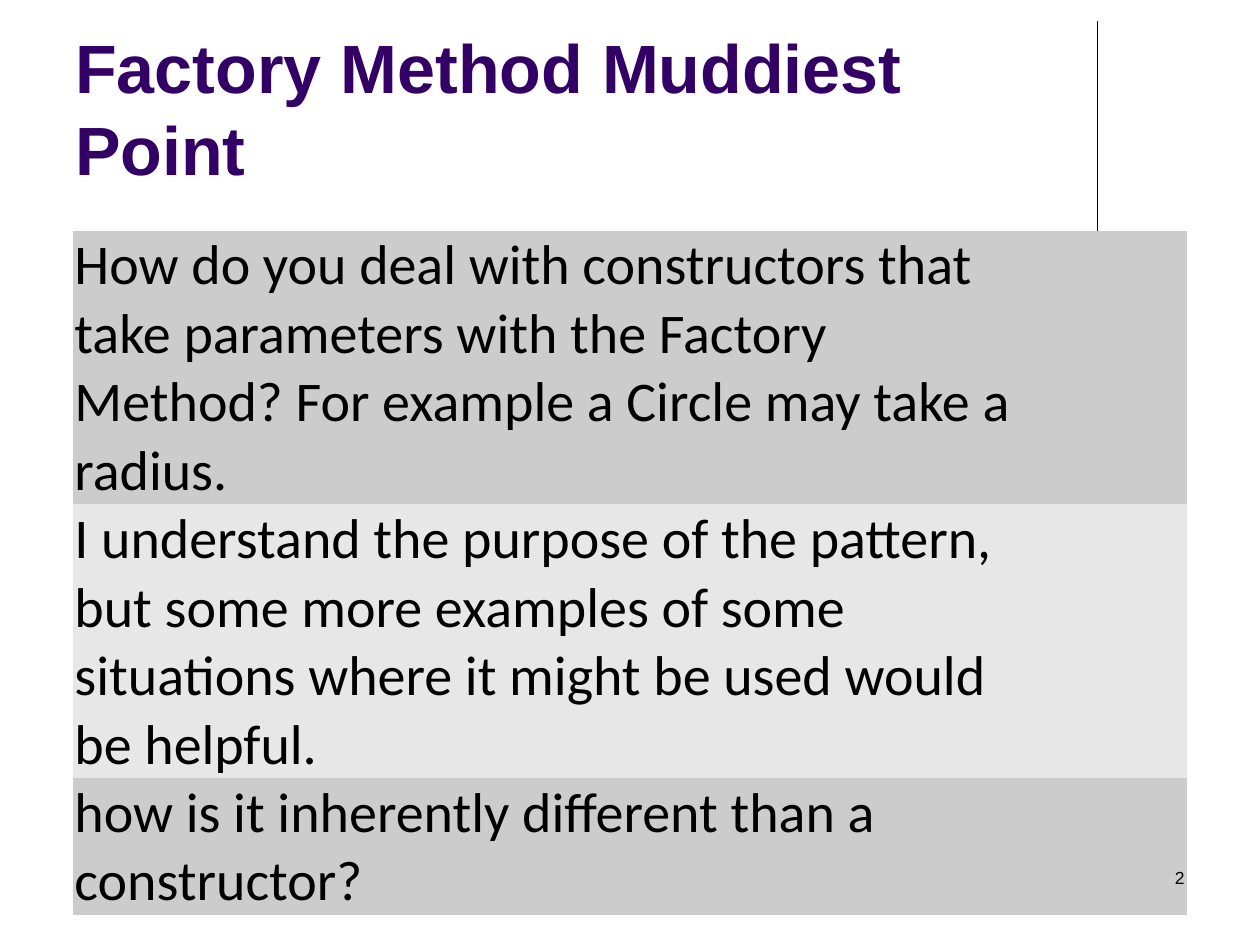
import pptx
import pptx.dml.color
import pptx.enum.shapes
import pptx.enum.text
import pptx.oxml
import pptx.util

Cm = pptx.util.Cm
NO_GRID_STYLE = "{2D5ABB26-0587-4C30-8999-92F81FD0307C}"


def color(hex_string):
    return pptx.dml.color.RGBColor.from_string(hex_string)


def write_text(text_frame, text, text_color, anchor, alignment, font_format):
    text_frame.word_wrap = True
    text_frame.vertical_anchor = anchor
    paragraph = text_frame.paragraphs[0]
    paragraph.alignment = alignment
    run = paragraph.add_run()
    run.text = text
    for name, value in font_format.items():
        setattr(run.font, name, value)
    run.font.color.rgb = color(text_color)


title_format = {"name": "Arial", "size": pptx.util.Pt(39), "bold": True}
cell_format = {"name": "Calibri", "size": pptx.util.Pt(32), "bold": False}
number_format = {"name": "Arial", "size": pptx.util.Pt(10)}
cell_margins = {"margin_left": Cm(0.02), "margin_right": Cm(0.02),
                "margin_top": Cm(0.02), "margin_bottom": 0}
anchors = pptx.enum.text.MSO_ANCHOR
alignments = pptx.enum.text.PP_ALIGN

presentation = pptx.Presentation()
presentation.slide_width = Cm(25.4)
presentation.slide_height = Cm(19.05)
slide = presentation.slides.add_slide(presentation.slide_layouts[6])

# Vertical rule beside the title
rule = slide.shapes.add_connector(
    pptx.enum.shapes.MSO_CONNECTOR.STRAIGHT, Cm(22.12), Cm(0.43), Cm(22.12), Cm(4.65))
rule.line.color.rgb = color("000000")
rule.line.width = pptx.util.Pt(0.75)
rule._element.spPr.append(pptx.oxml.parse_xml(
    '<a:effectLst xmlns:a="http://schemas.openxmlformats.org/drawingml/2006/main"/>'))

# Title
title = slide.shapes.add_textbox(Cm(1.27), Cm(0.33), Cm(20.96), Cm(3.61))
write_text(title.text_frame, "Factory Method Muddiest Point", "330066",
           anchors.BOTTOM, alignments.LEFT, title_format)

# Table of questions with alternating grey rows: text, line count, fill
questions = [
    ("How do you deal with constructors that take parameters with the Factory Method? "
     "For example a Circle may take a radius.", 4, "CCCCCC"),
    ("I understand the purpose of the pattern, but some more examples of some "
     "situations where it might be used would be helpful.", 4, "E7E7E7"),
    ("how is it inherently different than a constructor?", 2, "CCCCCC"),
]
line_height = Cm(1.38)
line_total = sum(lines for _, lines, _ in questions)
table_shape = slide.shapes.add_table(
    len(questions), 2, Cm(1.48), Cm(4.65), Cm(22.44), line_height * line_total)
table = table_shape.table
table_shape._element.xpath(".//a:tableStyleId")[0].text = NO_GRID_STYLE
for column, width in zip(table.columns, (19.47, 2.97)):
    column.width = Cm(width)

for row, (question, lines, fill) in zip(table.rows, questions):
    row.height = line_height * lines
    for cell in row.cells:
        cell.fill.solid()
        cell.fill.fore_color.rgb = color(fill)
        for name, value in cell_margins.items():
            setattr(cell, name, value)
    question_cell = row.cells[0]
    question_cell.vertical_anchor = anchors.BOTTOM
    write_text(question_cell.text_frame, question, "000000",
               None, alignments.LEFT, cell_format)

# Slide number
number = slide.shapes.add_textbox(Cm(18.2), Cm(17.35), Cm(5.93), Cm(1.27))
write_text(number.text_frame, "2", "000000",
           anchors.TOP, alignments.RIGHT, number_format)

presentation.save("out.pptx")
